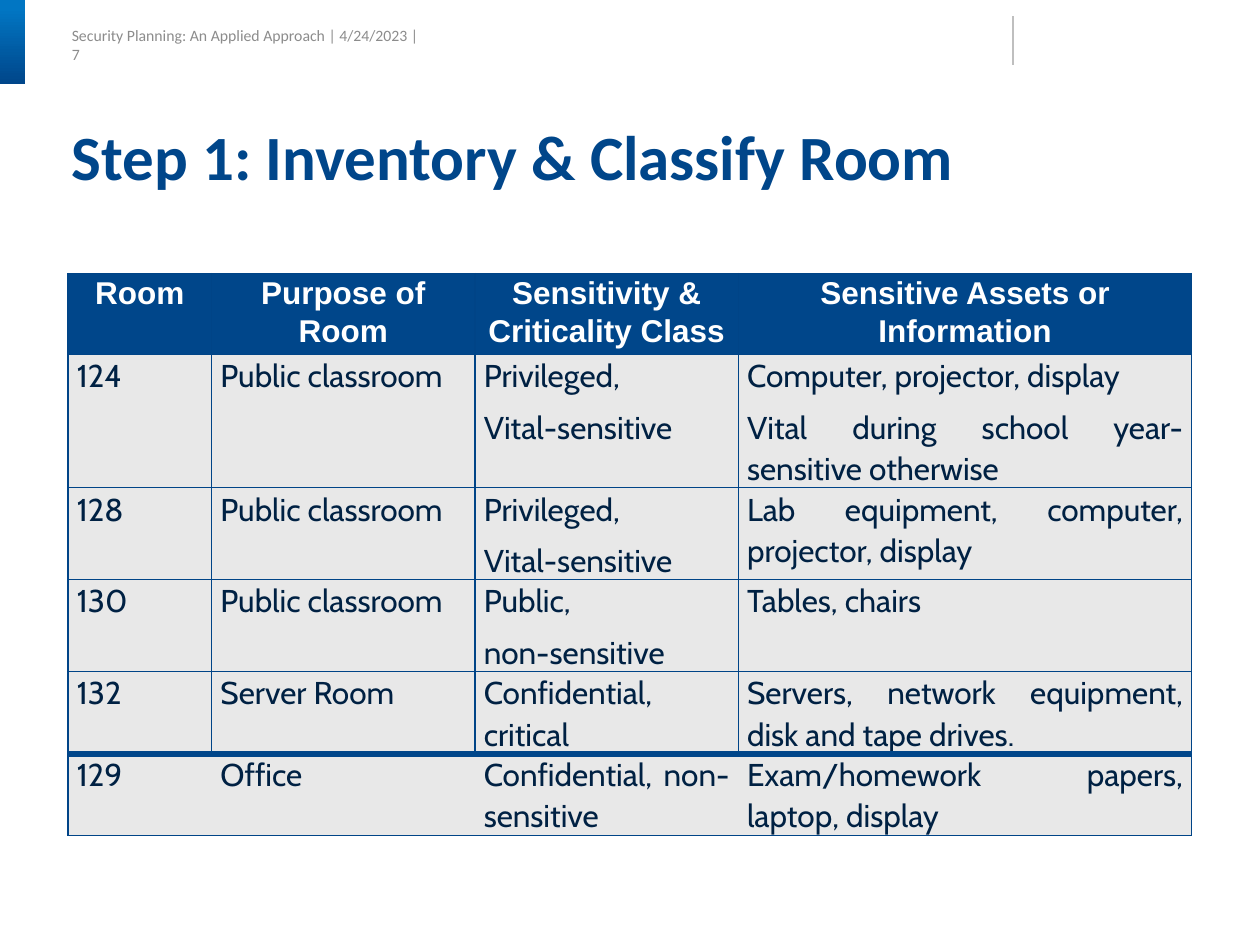
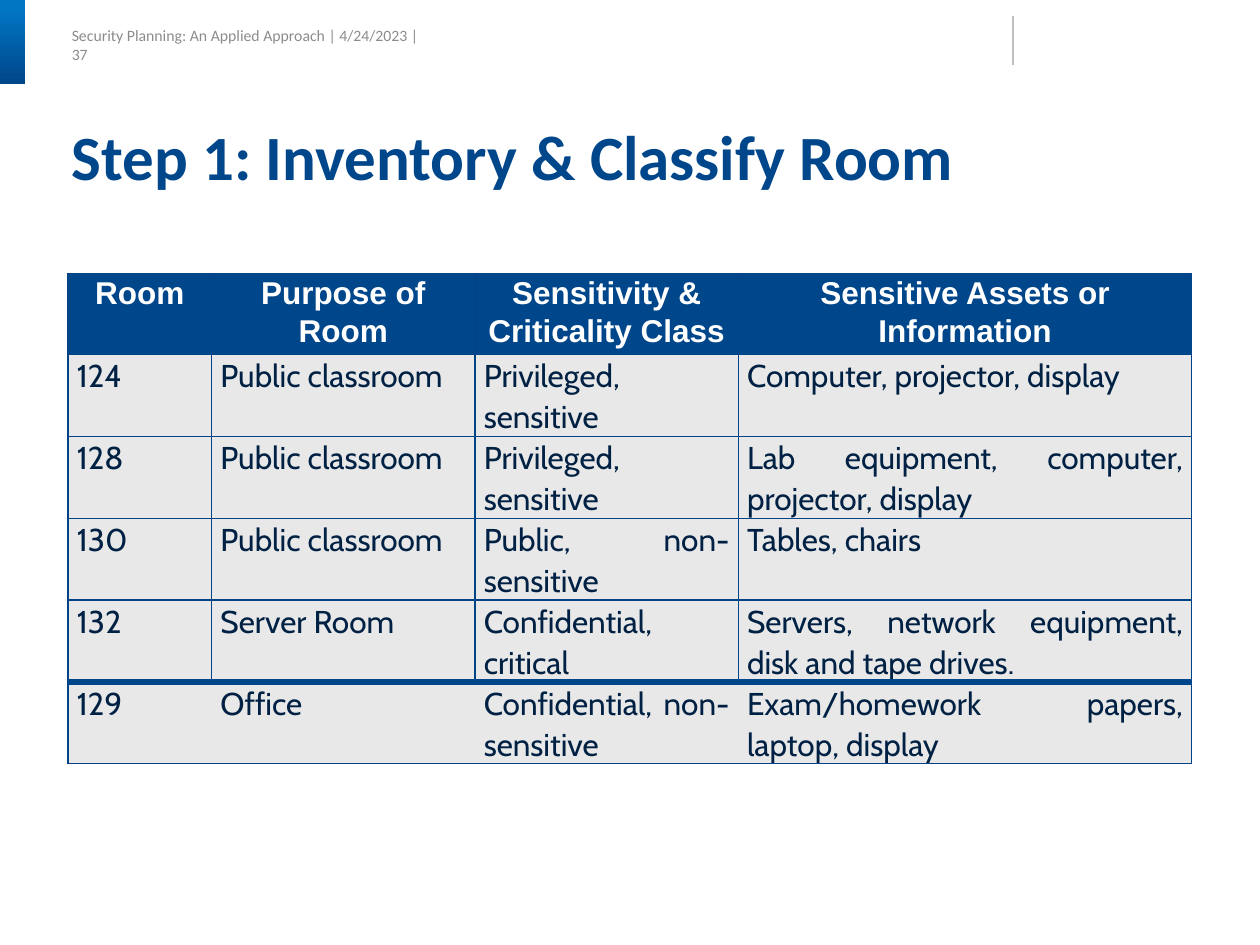
from dataclasses import dataclass
from typing import Any

from lxml.etree import SubElement
from pptx import Presentation
from pptx.dml.color import RGBColor
from pptx.enum.shapes import MSO_CONNECTOR, MSO_SHAPE
from pptx.enum.text import MSO_ANCHOR, PP_ALIGN
from pptx.oxml.ns import qn
from pptx.util import Inches, Pt

COLORS = {
    "navy": "00468A",
    "sky": "0176C3",
    "border": "004487",
    "ink": "002143",
    "cell": "E8E8E8",
    "rule": "BFBFBF",
    "footer": "8C8C8C",
    "white": "FFFFFF",
}
TITLE = "Step 1: Inventory & Classify Room"
FOOTER = "Security Planning: An Applied Approach | 4/24/2023 | {}"
HEADINGS = ("Room", "Purpose of Room", "Sensitivity & Criticality Class",
            "Sensitive Assets or Information")
COLUMN_WIDTHS = (1.14, 2.09, 2.09, 3.6)
HEADER_HEIGHT = 0.61
THIN, THICK = 0.75, 4

FRAME_FORMAT = {"word_wrap": True, "margin_left": 0, "margin_right": 0,
                "margin_top": 0, "margin_bottom": 0}
CELL_MARGINS = {"margin_left": Inches(0.07), "margin_right": Inches(0.07),
                "margin_top": 0, "margin_bottom": 0}
TITLE_FONT = {"name": "Calibri", "size": Pt(36), "bold": True}
FOOTER_FONT = {"name": "Calibri", "size": Pt(9), "bold": False}


@dataclass(frozen=True)
class CellStyle:
    font: dict[str, Any]
    color: str
    fill: str
    alignment: PP_ALIGN


@dataclass(frozen=True)
class Room:
    number: str
    purpose: str
    classes: str
    assets: str
    height: float = 0.65

    def texts(self) -> tuple[str, ...]:
        return self.number, self.purpose, self.classes, self.assets


@dataclass(frozen=True)
class RoomSlide:
    number: int
    rooms: tuple[Room, ...]


HEADER_STYLE = CellStyle({"name": "Arial", "size": Pt(18), "bold": True},
                         "white", "navy", PP_ALIGN.CENTER)
BODY_STYLE = CellStyle({"name": "Cabin", "size": Pt(18), "bold": False},
                       "ink", "cell", PP_ALIGN.JUSTIFY)

CLASSROOM = "Public classroom"
LAB_ASSETS = "Lab equipment, computer, projector, display"
SHARED_ROOMS = (
    Room("132", "Server Room", "Confidential, critical",
         "Servers, network equipment, disk and tape drives."),
    Room("129", "Office", "Confidential, non-sensitive",
         "Exam/homework papers, laptop, display"),
)
SLIDES = (
    RoomSlide(7, (
        Room("124", CLASSROOM, "Privileged,\nVital-sensitive",
             "Computer, projector, display\n"
             "Vital during school year- sensitive otherwise", 1.06),
        Room("128", CLASSROOM, "Privileged,\nVital-sensitive", LAB_ASSETS, 0.73),
        Room("130", CLASSROOM, "Public,\nnon-sensitive", "Tables, chairs", 0.73),
        *SHARED_ROOMS,
    )),
    RoomSlide(37, (
        Room("124", CLASSROOM, "Privileged, sensitive",
             "Computer, projector, display"),
        Room("128", CLASSROOM, "Privileged, sensitive", LAB_ASSETS),
        Room("130", CLASSROOM, "Public, non-sensitive", "Tables, chairs"),
        *SHARED_ROOMS,
    )),
)


def rgb(name: str) -> RGBColor:
    return RGBColor.from_string(COLORS[name])


def apply(target: Any, values: dict[str, Any]) -> None:
    for name, value in values.items():
        setattr(target, name, value)


def add_run(p: Any, text: str, font: dict[str, Any], color: str) -> None:
    r = p.add_run()
    r.text = text
    apply(r.font, font)
    r.font.color.rgb = rgb(color)


def add_text(s: Any, box: tuple[float, ...], text: str, font: dict[str, Any],
             color: str, frame: dict[str, Any], spacing: float = 1.0) -> None:
    tf = s.shapes.add_textbox(*map(Inches, box)).text_frame
    apply(tf, FRAME_FORMAT | frame)
    p = tf.paragraphs[0]
    p.line_spacing = spacing
    add_run(p, text, font, color)


def add_corner_band(s: Any) -> None:
    sp = s.shapes.add_shape(MSO_SHAPE.RECTANGLE, 0, 0, Inches(0.2), Inches(0.67))
    sp.shadow.inherit = False
    sp.line.fill.background()
    sp.fill.gradient()
    sp.fill.gradient_angle = 270
    for stop, position, color in zip(sp.fill.gradient_stops, (0.1, 1), ("sky", "navy")):
        stop.position = position
        stop.color.rgb = rgb(color)


def add_header_rule(s: Any) -> None:
    line = s.shapes.add_connector(MSO_CONNECTOR.STRAIGHT, Inches(8.04),
                                  Inches(0.13), Inches(8.04), Inches(0.52))
    line.line.color.rgb = rgb("rule")
    line.line.width = Pt(0.75)
    SubElement(line._element.spPr, qn("a:effectLst"))


def add_border(cell: Any, side: str, color: str, width: float) -> None:
    tc_pr = cell._tc.get_or_add_tcPr()
    ln = SubElement(tc_pr, qn(f"a:ln{side}"), w=str(int(Pt(width))))
    if width:
        fill = SubElement(ln, qn("a:solidFill"))
        SubElement(fill, qn("a:srgbClr"), val=COLORS[color])
    else:
        SubElement(ln, qn("a:noFill"))


def fill_cell(cell: Any, text: str, style: CellStyle,
              borders: dict[str, tuple[str, float]]) -> None:
    apply(cell, CELL_MARGINS)
    for side, (color, width) in borders.items():
        add_border(cell, side, color, width)
    cell.fill.solid()
    cell.fill.fore_color.rgb = rgb(style.fill)
    tf = cell.text_frame
    for i, line in enumerate(text.split("\n")):
        p = tf.add_paragraph() if i else tf.paragraphs[0]
        apply(p, {"alignment": style.alignment, "line_spacing": 1.07,
                  "space_after": Pt(6)})
        add_run(p, line, style.font, style.color)


def cell_borders(row: int, col: int, last_row: int) -> dict[str, tuple[str, float]]:
    thin, thick, none = ("border", THIN), ("navy", THICK), ("border", 0)
    last_col = len(HEADINGS) - 1
    in_last = row == last_row
    return {
        "L": none if in_last and col > 0 else thin,
        "R": none if in_last and col < last_col else thin,
        "T": thick if in_last else thin,
        "B": thick if row == last_row - 1 else thin,
    }


def add_room_table(s: Any, rooms: tuple[Room, ...]) -> None:
    rows = [HEADINGS, *(room.texts() for room in rooms)]
    heights = [HEADER_HEIGHT, *(room.height for room in rooms)]
    table = s.shapes.add_table(len(rows), len(HEADINGS), Inches(0.54), Inches(2.17),
                               Inches(sum(COLUMN_WIDTHS)), Inches(sum(heights))).table
    table.horz_banding = False
    for column, width in zip(table.columns, COLUMN_WIDTHS):
        column.width = Inches(width)
    for i, (texts, height) in enumerate(zip(rows, heights)):
        table.rows[i].height = Inches(height)
        style = BODY_STYLE if i else HEADER_STYLE
        for j, text in enumerate(texts):
            fill_cell(table.cell(i, j), text, style, cell_borders(i, j, len(rooms)))


def add_room_slide(prs: Any, content: RoomSlide) -> None:
    s = prs.slides.add_slide(prs.slide_layouts[6])
    add_text(s, (0.57, 0.23, 2.84, 0.23), FOOTER.format(content.number), FOOTER_FONT,
             "footer", {"word_wrap": False, "vertical_anchor": MSO_ANCHOR.MIDDLE,
                        "margin_top": Inches(0.02)})
    add_corner_band(s)
    add_header_rule(s)
    add_room_table(s, content.rooms)
    add_text(s, (0.57, 1, 8.92, 0.55), TITLE, TITLE_FONT, "navy",
             {"vertical_anchor": MSO_ANCHOR.TOP}, 0.9)


def main() -> None:
    prs = Presentation()
    prs.slide_width, prs.slide_height = Inches(10), Inches(7.5)
    for content in SLIDES:
        add_room_slide(prs, content)
    prs.save("out.pptx")


if __name__ == "__main__":
    main()
